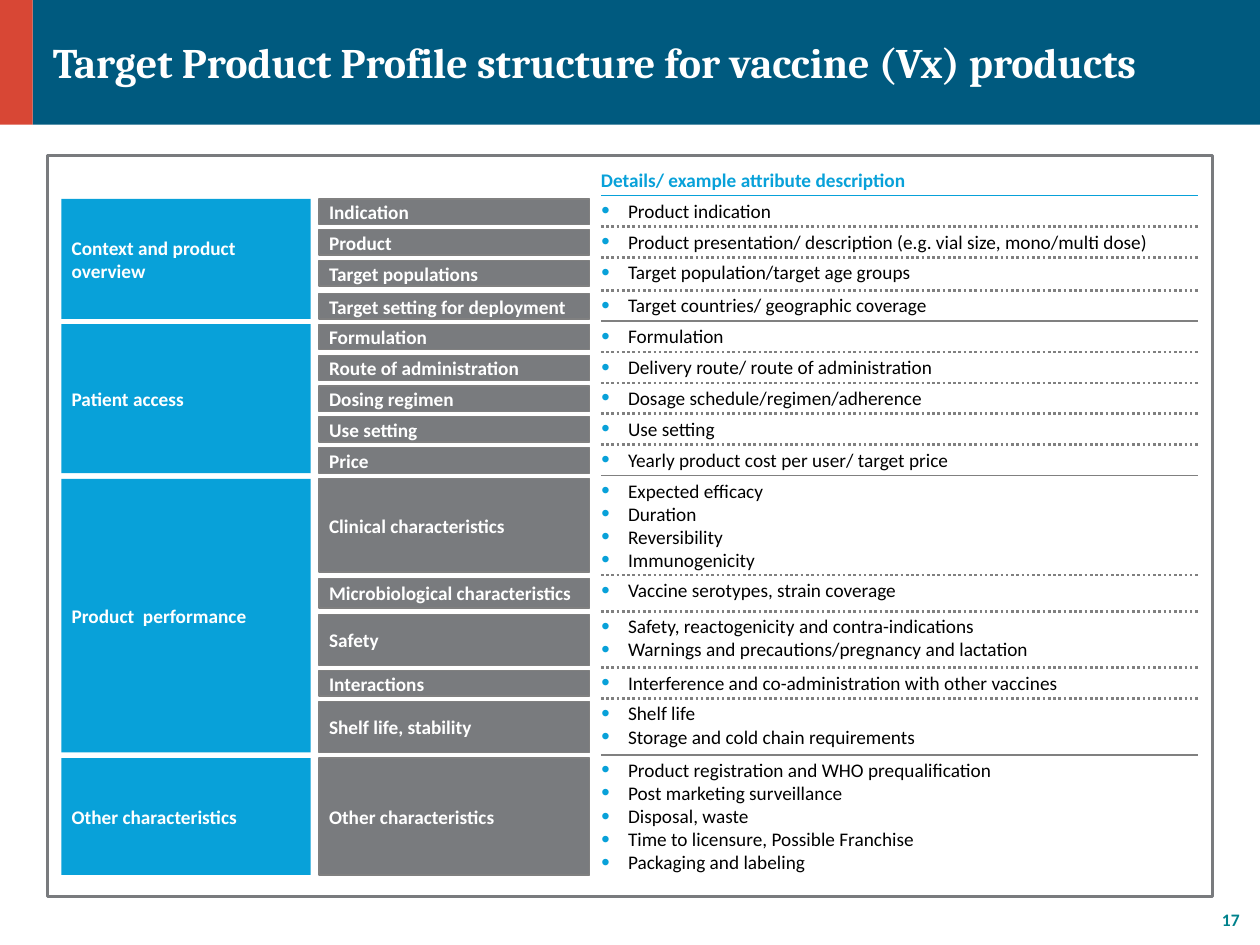
from lxml import etree
from pptx import Presentation
from pptx.dml.color import RGBColor
from pptx.enum.dml import MSO_LINE
from pptx.enum.shapes import MSO_CONNECTOR, MSO_SHAPE
from pptx.enum.text import MSO_ANCHOR, MSO_AUTO_SIZE, PP_ALIGN
from pptx.oxml.ns import qn
from pptx.util import Pt

RECTANGLE = MSO_SHAPE.RECTANGLE
STRAIGHT = MSO_CONNECTOR.STRAIGHT
DOTTED = MSO_LINE.ROUND_DOT
TOP, MIDDLE, BOTTOM = MSO_ANCHOR.TOP, MSO_ANCHOR.MIDDLE, MSO_ANCHOR.BOTTOM
LEFT, RIGHT = PP_ALIGN.LEFT, PP_ALIGN.RIGHT

COLORS = {
    "navy": "005A7F", "red": "D84735", "teal": "00828C", "blue": "08A1D9",
    "gray": "797B7E", "rule": "808080", "white": "FFFFFF", "black": "000000",
}
RULE_OFFSET = 1.8  # distance of a rule above the row that follows it
LABEL_INSET = 5.8
LINE_HEIGHT = 13.4

# Column boxes: left, width
GROUP_COLUMN = (35.1, 142.5)
ATTRIBUTE_COLUMN = (182.2, 154.8)
DETAIL_COLUMN = (343.4, 341.3)

# Group name, then its rows: attribute, top, height, details
GROUPS = [
    ("Context and product overview", [
        ("Indication", 113.7, 14.5, ["Product indication"]),
        ("Product", 131.3, 14.5,
         ["Product presentation/ description (e.g. vial size, mono/multi dose)"]),
        ("Target populations", 149, 14.5, ["Target population/target age groups"]),
        ("Target setting for deployment", 167.8, 14.5,
         ["Target countries/ geographic coverage"]),
    ]),
    ("Patient access", [
        ("Formulation", 185.3, 14.5, ["Formulation"]),
        ("Route of administration", 203, 14.5,
         ["Delivery route/ route of administration"]),
        ("Dosing regimen", 220.6, 14.5, ["Dosage schedule/regimen/adherence"]),
        ("Use setting", 238.2, 14.5, ["Use setting"]),
        ("Price", 255.9, 14.5, ["Yearly product cost per user/ target price"]),
    ]),
    ("Product  performance", [
        ("Clinical characteristics", 273.6, 53.3,
         ["Expected efficacy", "Duration", "Reversibility", "Immunogenicity"]),
        ("Microbiological characteristics", 330.5, 17,
         ["Vaccine serotypes, strain coverage"]),
        ("Safety", 351.2, 29,
         ["Safety, reactogenicity and contra-indications",
          "Warnings and precautions/pregnancy and lactation"]),
        ("Interactions", 383.3, 14.5,
         ["Interference and co-administration with other vaccines"]),
        ("Shelf life, stability", 401, 29,
         ["Shelf life", "Storage and cold chain requirements"]),
    ]),
    ("Other characteristics", [
        ("Other characteristics", 433.2, 66.8,
         ["Product registration and WHO prequalification",
          "Post marketing surveillance", "Disposal, waste",
          "Time to licensure, Possible Franchise", "Packaging and labeling"]),
    ]),
]


def rgb(name):
    return RGBColor.from_string(COLORS[name])


def add_bullet(paragraph):
    properties = paragraph._p.get_or_add_pPr()
    properties.set("marL", str(Pt(15.5)))
    properties.set("indent", str(-Pt(15.2)))
    color = etree.SubElement(properties, qn("a:buClr"))
    etree.SubElement(color, qn("a:srgbClr"), val=COLORS["blue"])
    etree.SubElement(properties, qn("a:buSzPct"), val="125000")
    etree.SubElement(properties, qn("a:buFont"), typeface="Arial")
    etree.SubElement(properties, qn("a:buChar"), char="•")


def write_text(shape, lines, color="white", size=11, font="Calibri", bold=True,
               anchor=MIDDLE, align=LEFT, inset=0, bullets=False, wrap=True):
    frame = shape.text_frame
    frame.word_wrap = wrap
    frame.auto_size = MSO_AUTO_SIZE.NONE
    frame.vertical_anchor = anchor
    frame.margin_left = frame.margin_right = Pt(inset)
    frame.margin_top = frame.margin_bottom = Pt(inset)
    for index, line in enumerate(lines):
        paragraph = frame.add_paragraph() if index else frame.paragraphs[0]
        paragraph.alignment = align
        if bullets:
            add_bullet(paragraph)
        run = paragraph.add_run()
        run.text = line
        run.font.name = font
        run.font.size = Pt(size)
        run.font.bold = bold
        run.font.color.rgb = rgb(color)


def add_text(slide, box, lines, **text_format):
    shape = slide.shapes.add_textbox(*map(Pt, box))
    write_text(shape, lines, **text_format)


def add_block(slide, box, fill, line=None, line_width=0.75):
    shape = slide.shapes.add_shape(RECTANGLE, *map(Pt, box))
    shape.shadow.inherit = False
    shape.fill.solid()
    shape.fill.fore_color.rgb = rgb(fill)
    if line:
        shape.line.color.rgb = rgb(line)
        shape.line.width = Pt(line_width)
    else:
        shape.line.fill.background()
    return shape


def add_rule(slide, y, color="rule", dotted=False):
    left, width = DETAIL_COLUMN
    rule = slide.shapes.add_connector(STRAIGHT, Pt(left), Pt(y), Pt(left + width), Pt(y))
    rule.line.color.rgb = rgb(color)
    rule.line.width = Pt(1.5 if dotted else 0.75)
    if dotted:
        rule.line.dash_style = DOTTED
    etree.SubElement(rule._element.spPr, qn("a:effectLst"))


def add_title_band(slide, left, top, width, height):
    accent = 18.7
    add_block(slide, (left + accent, top, width - accent, height), "navy")
    add_block(slide, (left, top, accent, height), "red")
    add_text(slide, (left + 30.2, top + 20.9, width - 41.8, 29),
             ["Target Product Profile structure for vaccine (Vx) products"],
             size=24, font="Cambria")


def add_row(slide, attribute, top, height, details):
    left, width = ATTRIBUTE_COLUMN
    label = add_block(slide, (left, top, width, height), "gray", "rule")
    write_text(label, [attribute], inset=LABEL_INSET)
    left, width = DETAIL_COLUMN
    add_text(slide, (left, top, width, LINE_HEIGHT * len(details)), details,
             color="black", bold=False, anchor=TOP, bullets=True)


def add_profile(slide, left, top, width, height):
    add_block(slide, (left, top, width, height), "white", "gray", 1.5)
    detail_left, detail_width = DETAIL_COLUMN
    add_text(slide, (detail_left, top + 7.2, detail_width, LINE_HEIGHT),
             ["Details/ example attribute description"], color="blue", anchor=BOTTOM)
    for group_index, (name, rows) in enumerate(GROUPS):
        group_top = rows[0][1]
        group_bottom = rows[-1][1] + rows[-1][2]
        group_left, group_width = GROUP_COLUMN
        group = add_block(
            slide, (group_left, group_top, group_width, group_bottom - group_top), "blue")
        write_text(group, [name], inset=LABEL_INSET)
        # Solid rule above each group, dotted rules between its rows
        add_rule(slide, group_top - RULE_OFFSET, "rule" if group_index else "blue")
        for row in rows[1:]:
            add_rule(slide, row[1] - RULE_OFFSET, dotted=True)
        for row in rows:
            add_row(slide, *row)


def main():
    presentation = Presentation()
    presentation.slide_width, presentation.slide_height = Pt(720), Pt(540)
    slide = presentation.slides.add_slide(presentation.slide_layouts[6])
    add_title_band(slide, 0, 0, 720, 71.3)
    add_profile(slide, 27.2, 88.8, 665.8, 423.4)
    # Page number
    add_text(slide, (696.2, 519.2, 12.2, 12.2), ["17"], color="teal", size=10,
             align=RIGHT, wrap=False)
    presentation.save("out.pptx")


if __name__ == "__main__":
    main()
